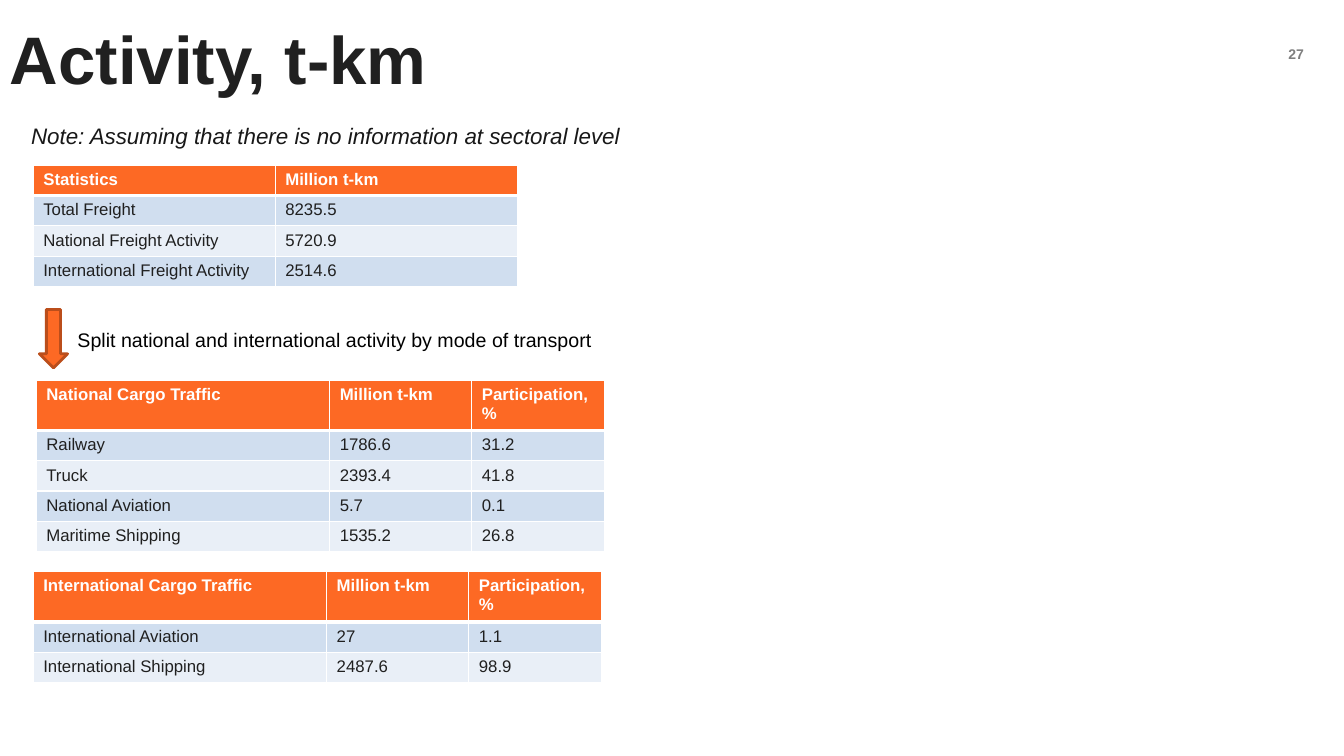
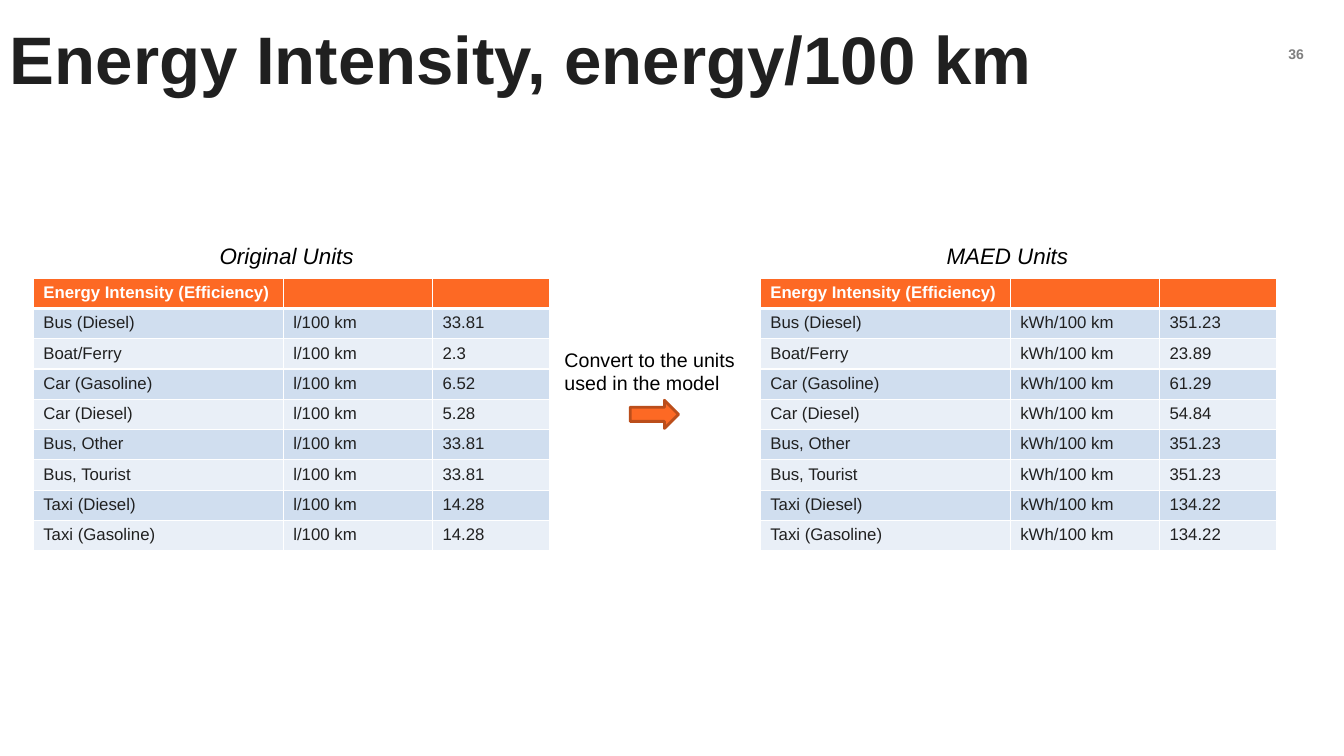
from dataclasses import dataclass

from lxml.etree import SubElement as Sub
from pptx import Presentation
from pptx.dml.color import RGBColor as Rgb
from pptx.enum.shapes import MSO_SHAPE as Kind
from pptx.enum.text import MSO_ANCHOR as Anchor, PP_ALIGN as Align
from pptx.oxml.ns import qn
from pptx.slide import Slide
from pptx.table import _Cell as Cell
from pptx.text.text import TextFrame as Frame
from pptx.util import Inches, Pt


@dataclass(frozen=True)
class Theme:
    font: str = "Arial"
    ink: str = "202020"
    note: str = "181818"
    black: str = "000000"
    white: str = "FFFFFF"
    grey: str = "7F7F7F"
    main: str = "FD6924"
    edge: str = "BB4E1B"
    bands: tuple[str, str] = ("D0DEEF", "E9EFF7")
    title: int = 48
    lead: int = 16
    body: int = 14
    cell: int = 12
    page: int = 10


@dataclass(frozen=True)
class Box:
    left: float
    top: float
    width: float
    height: float

    def emu(self) -> tuple[int, ...]:
        return tuple(Inches(v) for v in (self.left, self.top, self.width, self.height))


@dataclass(frozen=True)
class Grid:
    left: float
    top: float
    cols: tuple[float, ...]
    rows: tuple[tuple[str, ...], ...]
    head: float = 0.3
    row: float = 0.3


T = Theme()
SPLIT = (2.91, 1.41, 1.32)
UNITS = (2.48, 1.48, 1.16)
MODES = ("Bus (Diesel)", "Boat/Ferry", "Car (Gasoline)", "Car (Diesel)",
         "Bus, Other", "Bus, Tourist", "Taxi (Diesel)", "Taxi (Gasoline)")
LITRES = ("33.81", "2.3", "6.52", "5.28", "33.81", "33.81", "14.28", "14.28")
POWER = ("351.23", "23.89", "61.29", "54.84", "351.23", "351.23", "134.22", "134.22")


def write(frame: Frame, text: str, *, size: int, color: str = T.black,
          bold: bool = False, italic: bool = False,
          align: Align = Align.LEFT, space: float = 1.0) -> None:
    para = frame.paragraphs[0]
    para.alignment = align
    para.line_spacing = space
    if not text:
        Sub(para._p, qn("a:endParaRPr"), sz=str(size * 100))
        return
    run = para.add_run()
    run.text = text
    font = run.font
    font.name, font.size = T.font, Pt(size)
    font.bold, font.italic = bold, italic
    font.color.rgb = Rgb.from_string(color)


def label(slide: Slide, box: Box, text: str, *, wrap: bool = True,
          anchor: Anchor = Anchor.TOP, **form) -> None:
    frame = slide.shapes.add_textbox(*box.emu()).text_frame
    frame.word_wrap = wrap
    frame.vertical_anchor = anchor
    write(frame, text, **form)


def arrow(slide: Slide, box: Box, turn: float = 0) -> None:
    shape = slide.shapes.add_shape(Kind.DOWN_ARROW, *box.emu())
    shape.rotation = turn
    shape.shadow.inherit = False
    shape.fill.solid()
    shape.fill.fore_color.rgb = Rgb.from_string(T.main)
    shape.line.color.rgb = Rgb.from_string(T.edge)
    shape.line.width = Pt(2)


def border(cell: Cell, top: int, base: int) -> None:
    props = cell._tc.get_or_add_tcPr()
    for side, width in (("L", 1), ("R", 1), ("T", top), ("B", base)):
        line = Sub(props, qn(f"a:ln{side}"), w=str(Pt(width)))
        Sub(Sub(line, qn("a:solidFill")), qn("a:srgbClr"), val=T.white)


def table(slide: Slide, grid: Grid) -> None:
    high = grid.head + grid.row * (len(grid.rows) - 1)
    box = Box(grid.left, grid.top, sum(grid.cols), high)
    body = slide.shapes.add_table(len(grid.rows), len(grid.cols), *box.emu()).table
    for col, width in zip(body.columns, grid.cols):
        col.width = Inches(width)
    for r, texts in enumerate(grid.rows):
        head = r == 0
        body.rows[r].height = Inches(grid.head if head else grid.row)
        for c, text in enumerate(texts):
            cell = body.cell(r, c)
            border(cell, 3 if r == 1 else 1, 3 if head else 1)
            cell.fill.solid()
            cell.fill.fore_color.rgb = Rgb.from_string(
                T.main if head else T.bands[(r - 1) % 2])
            write(cell.text_frame, text, size=T.cell, bold=head,
                  color=T.white if head else T.ink)


def start(deck: Presentation, title: str, page: int) -> Slide:
    slide = deck.slides.add_slide(deck.slide_layouts[6])
    label(slide, Box(12.62, 0.4, 0.47, 0.4), str(page), size=T.page,
          color=T.grey, bold=True, align=Align.CENTER)
    label(slide, Box(0, 0, 11.93, 1.24), title, size=T.title, color=T.ink,
          bold=True, anchor=Anchor.MIDDLE, space=0.9)
    return slide


def freight(deck: Presentation) -> None:
    slide = start(deck, "Activity, t-km", 27)
    label(slide, Box(0.21, 1.16, 6.46, 0.37),
          "Note: Assuming that there is no information at sectoral level",
          size=T.lead, color=T.note, italic=True)
    arrow(slide, Box(0.39, 3.07, 0.28, 0.58))
    label(slide, Box(0.67, 3.2, 5.33, 0.34),
          "Split national and international activity by mode of transport",
          size=T.body, wrap=False)
    unit, share = "Million t-km", "Participation, %"
    table(slide, Grid(0.33, 1.64, (2.4, 2.4), (
        ("Statistics", unit),
        ("Total Freight", "8235.5"),
        ("National Freight Activity", "5720.9"),
        ("International Freight Activity", "2514.6"))))
    table(slide, Grid(0.36, 3.77, SPLIT, (
        ("National Cargo Traffic", unit, share),
        ("Railway", "1786.6", "31.2"),
        ("Truck", "2393.4", "41.8"),
        ("National Aviation", "5.7", "0.1"),
        ("Maritime Shipping", "1535.2", "26.8")), head=0.5))
    table(slide, Grid(0.33, 5.67, SPLIT, (
        ("International Cargo Traffic", unit, share),
        ("International Aviation", "27", "1.1"),
        ("International Shipping", "2487.6", "98.9")), head=0.5))


def energy(deck: Presentation) -> None:
    slide = start(deck, "Energy Intensity, energy/100 km", 36)
    arrow(slide, Box(6.35, 3.87, 0.28, 0.48), turn=270)
    label(slide, Box(5.5, 3.4, 1.99, 0.57),
          "Convert to the units used in the model", size=T.body)
    for left, mid, name, unit, vals in (
            (0.33, 2.08, "Original Units", "l/100 km", LITRES),
            (7.54, 9.29, "MAED Units", "kWh/100 km", POWER)):
        label(slide, Box(mid, 2.35, 1.6, 0.37), name, size=T.lead, italic=True)
        rows = tuple((mode, unit, val) for mode, val in zip(MODES, vals))
        table(slide, Grid(left, 2.76, UNITS,
                          (("Energy Intensity (Efficiency)", "", ""), *rows)))


def main() -> None:
    deck = Presentation()
    deck.slide_width, deck.slide_height = Inches(13.33), Inches(7.5)
    freight(deck)
    energy(deck)
    deck.save("out.pptx")


if __name__ == "__main__":
    main()
